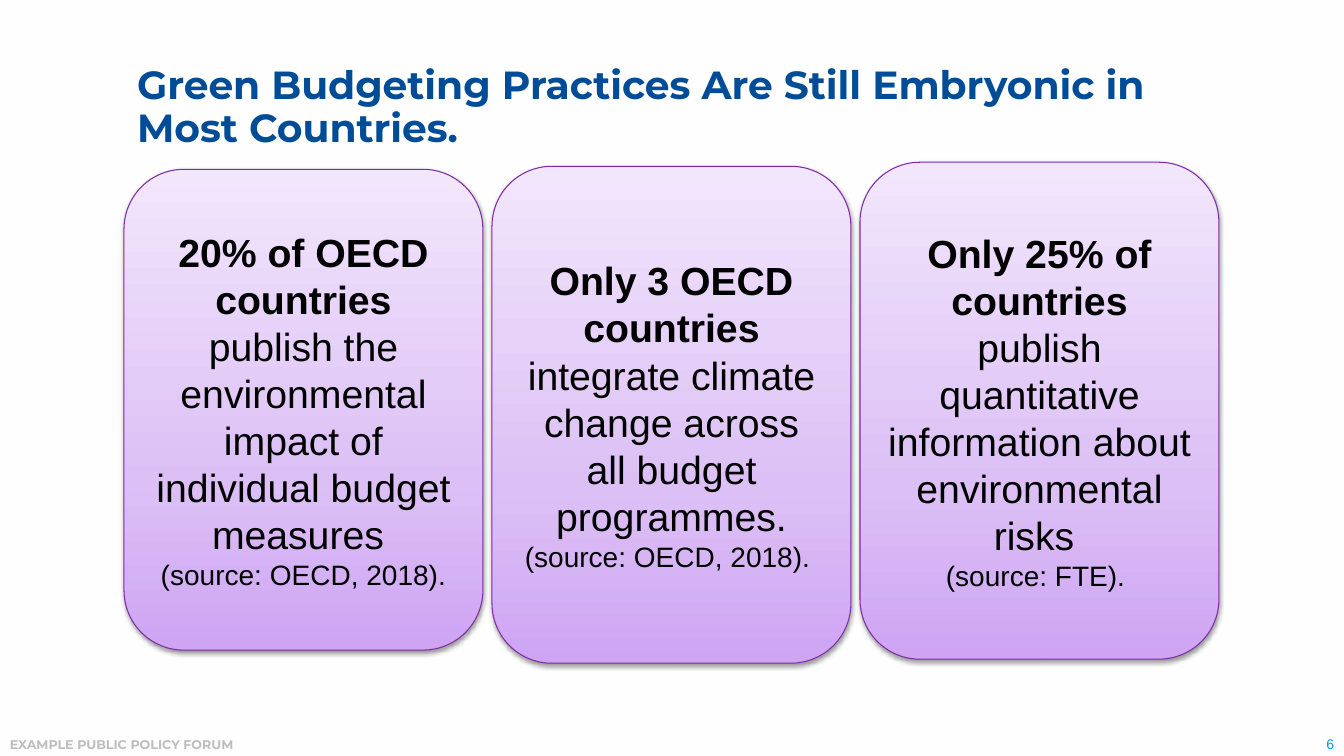
import copy

import lxml.etree
import pptx
import pptx.dml.color
import pptx.enum.shapes
import pptx.enum.text
import pptx.oxml.ns
import pptx.util

Inches = pptx.util.Inches
Pt = pptx.util.Pt
RGBColor = pptx.dml.color.RGBColor
ALIGN = pptx.enum.text.PP_ALIGN
ANCHOR = pptx.enum.text.MSO_ANCHOR

BACKGROUND = RGBColor(0xFE, 0xFE, 0xFE)
BLACK = RGBColor(0, 0, 0)
TITLE_BLUE = RGBColor(0x00, 0x4C, 0x97)
NUMBER_BLUE = RGBColor(0x00, 0x9C, 0xDE)
FOOTER_GREY = RGBColor(0xBE, 0xBE, 0xBE)
CARD_LINE = RGBColor(0x7E, 0x2C, 0xA6)
CARD_STOPS = [
    (0, RGBColor(0xCE, 0xA4, 0xF3)),
    (0.35, RGBColor(0xDC, 0xC0, 0xF5)),
    (1, RGBColor(0xF2, 0xE6, 0xFC)),
]

CARD_LEFT, CARD_WIDTH, CARD_STEP = 1.23, 3.56, 3.65
# top, height, bold lead, statement, source
CARDS = [
    (1.68, 4.77, "20% of OECD countries ",
     "publish the environmental impact of individual budget measures ",
     "(source: OECD, 2018)."),
    (1.65, 4.93, "Only 3 OECD countries ",
     "integrate climate change across all budget programmes.",
     "(source: OECD, 2018). "),
    (1.61, 4.93, "Only 25% of countries ",
     "publish quantitative information about environmental risks ",
     "(source: FTE). "),
]


def add_run(p, text, size, color=BLACK, font="Arial", bold=False, align=None):
    r = p.add_run()
    r.text = text
    r.font.size = Pt(size)
    r.font.name = font
    r.font.bold = bold
    r.font.color.rgb = color
    if align is not None:
        p.alignment = align


def add_label(s, text, left, top, width, height, anchor=ANCHOR.TOP, **fmt):
    tf = s.shapes.add_textbox(
        Inches(left), Inches(top), Inches(width), Inches(height)).text_frame
    tf.word_wrap = True
    tf.vertical_anchor = anchor
    add_run(tf.paragraphs[0], text, **fmt)


def set_title(s, text):
    sp = s.shapes.title
    sp.left, sp.top = Inches(1.36), Inches(0.54)
    sp.width, sp.height = Inches(10.62), Inches(1.07)
    tf = sp.text_frame
    tf.margin_left = tf.margin_right = tf.margin_top = tf.margin_bottom = 0
    tf.word_wrap = True
    tf.auto_size = pptx.enum.text.MSO_AUTO_SIZE.NONE
    tf.vertical_anchor = ANCHOR.MIDDLE
    p = tf.paragraphs[0]
    p.line_spacing = 0.9
    add_run(p, text, 28, color=TITLE_BLUE, font="Montserrat", bold=True,
            align=ALIGN.LEFT)


def fill_gradient(sp):
    """Fill the shape with the card colours, darkest at the bottom."""
    sp.fill.gradient()
    sp.fill.gradient_angle = 90
    first = sp._element.spPr.find(".//" + pptx.oxml.ns.qn("a:gs"))
    first.addnext(copy.deepcopy(first))
    for stop, (position, color) in zip(sp.fill.gradient_stops, CARD_STOPS):
        stop.position = position
        stop.color.rgb = color


def add_shadow(sp):
    sp.shadow.inherit = False
    qn = pptx.oxml.ns.qn
    effects = sp._element.spPr.find(qn("a:effectLst"))
    shadow = lxml.etree.SubElement(
        effects, qn("a:outerShdw"), blurRad=str(Pt(3.1)), dist=str(Pt(1.6)),
        dir="5400000", rotWithShape="0")
    color = lxml.etree.SubElement(shadow, qn("a:srgbClr"), val=str(BLACK))
    lxml.etree.SubElement(color, qn("a:alpha"), val="38000")


def add_card(s, left, top, height, lead, statement, source):
    sp = s.shapes.add_shape(
        pptx.enum.shapes.MSO_SHAPE.ROUNDED_RECTANGLE,
        Inches(left), Inches(top), Inches(CARD_WIDTH), Inches(height))
    fill_gradient(sp)
    sp.line.color.rgb = CARD_LINE
    sp.line.width = Pt(0.75)
    add_shadow(sp)
    tf = sp.text_frame
    tf.word_wrap = True
    tf.vertical_anchor = ANCHOR.MIDDLE
    p = tf.paragraphs[0]
    add_run(p, lead, 28, bold=True, align=ALIGN.CENTER)
    add_run(p, statement, 28)
    add_run(tf.add_paragraph(), source, 20, align=ALIGN.CENTER)


def main():
    prs = pptx.Presentation()
    prs.slide_width, prs.slide_height = Inches(13.33), Inches(7.5)
    s = prs.slides.add_slide(prs.slide_layouts.get_by_name("Title Only"))
    s.background.fill.solid()
    s.background.fill.fore_color.rgb = BACKGROUND

    add_label(s, "EXAMPLE PUBLIC POLICY FORUM", 0, 7.26, 10, 0.25,
              size=9, color=FOOTER_GREY, font="Montserrat", bold=True)
    add_label(s, "6", 12.01, 7.24, 1.32, 0.27, anchor=ANCHOR.BOTTOM,
              size=10, color=NUMBER_BLUE, align=ALIGN.RIGHT)
    set_title(s, "Green Budgeting Practices Are Still Embryonic in Most Countries.")
    for i, card in enumerate(CARDS):
        add_card(s, CARD_LEFT + i * CARD_STEP, *card)

    prs.save("out.pptx")


if __name__ == "__main__":
    main()
